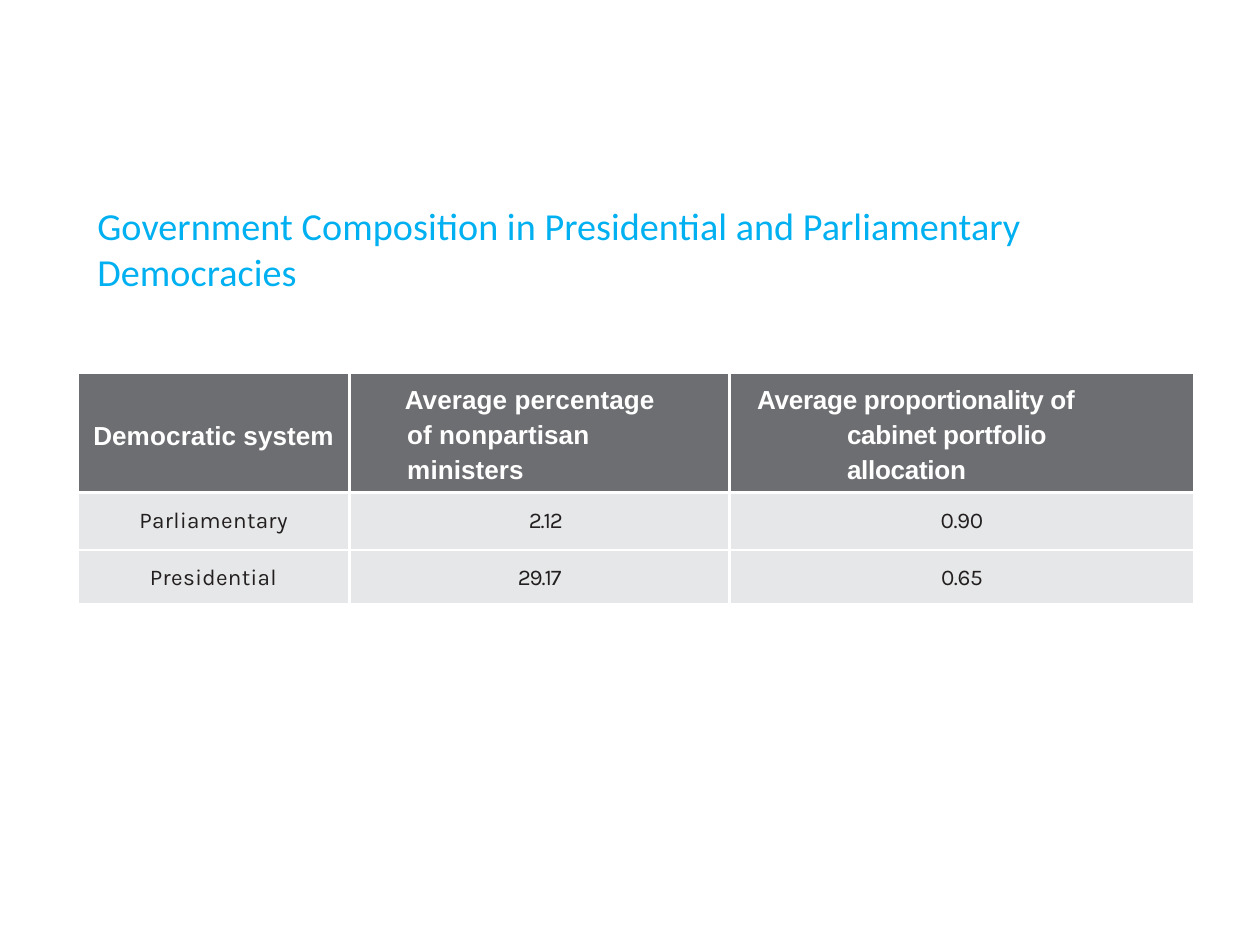
from dataclasses import dataclass

from lxml import etree
from pptx import Presentation
from pptx.dml.color import RGBColor
from pptx.enum.text import MSO_ANCHOR, PP_ALIGN
from pptx.oxml.ns import qn
from pptx.util import Inches, Pt

LEFT, CENTER = PP_ALIGN.LEFT, PP_ALIGN.CENTER
TOP, MIDDLE = MSO_ANCHOR.TOP, MSO_ANCHOR.MIDDLE


@dataclass(frozen=True)
class Theme:
    title_color: str = "00B0F0"
    header_fill: str = "6D6E71"
    body_fill: str = "E6E7E8"
    white: str = "FFFFFF"
    ink: str = "231F20"
    title_font: str = "Calibri"
    header_font: str = "Arial"
    body_font: str = "Karla"
    title_size: float = 11
    header_size: float = 7.5
    body_size: float = 6.5


def write_text(tf, text, *, font, size, color, bold=False, align=LEFT,
               spacing=0, line=1.0, before=0, left=0, indent=0):
    p = tf.paragraphs[0]
    p.alignment = align
    p.line_spacing = line
    p.space_before = Pt(before)
    pPr = p._p.get_or_add_pPr()
    pPr.set("marL", str(Inches(left)))
    pPr.set("indent", str(Inches(indent)))
    r = p.add_run()
    r.text = text
    r.font.name = font
    r.font.size = Pt(size)
    r.font.bold = bold
    r.font.color.rgb = RGBColor.from_string(color)
    r._r.get_or_add_rPr().set("spc", str(round(spacing * 100)))


class SlideBuilder:
    def __init__(self, slide, theme):
        self.s = slide
        self.theme = theme

    def title(self, text, left, top, width, height):
        sp = self.s.shapes.add_textbox(Inches(left), Inches(top), Inches(width), Inches(height))
        tf = sp.text_frame
        tf.word_wrap = True
        tf.margin_left = tf.margin_right = tf.margin_bottom = 0
        tf.margin_top = Inches(0.01)
        t = self.theme
        write_text(tf, text, font=t.title_font, size=t.title_size,
                   color=t.title_color, before=0.6, left=0.01)

    def borders(self, cell):
        tcPr = cell._tc.get_or_add_tcPr()
        for side in ("a:lnL", "a:lnR", "a:lnT", "a:lnB"):
            ln = etree.SubElement(tcPr, qn(side), w=str(Pt(1)))
            fill = etree.SubElement(ln, qn("a:solidFill"))
            etree.SubElement(fill, qn("a:srgbClr"), val=self.theme.white)

    def cell(self, cell, text, fill, *, top=0, right=0, anchor=TOP, **text_format):
        cell.margin_left = cell.margin_bottom = 0
        cell.margin_top = Inches(top)
        cell.margin_right = Inches(right)
        cell.vertical_anchor = anchor
        self.borders(cell)
        cell.fill.solid()
        cell.fill.fore_color.rgb = RGBColor.from_string(fill)
        write_text(cell.text_frame, text, **text_format)

    def table(self, header, rows, left, top, widths, heights):
        frame = self.s.shapes.add_table(
            len(heights), len(widths), Inches(left), Inches(top),
            Inches(sum(widths)), Inches(sum(heights)))
        table = frame.table
        table.first_row = table.horz_banding = False
        for column, width in zip(table.columns, widths):
            column.width = Inches(width)
        for row, height in zip(table.rows, heights):
            row.height = Inches(height)
        t = self.theme
        for i, (text, layout) in enumerate(header):
            self.cell(table.cell(0, i), text, t.header_fill, font=t.header_font,
                      size=t.header_size, color=t.white, bold=True, **layout)
        for j, (before, values) in enumerate(rows, 1):
            for i, (text, spacing, indent) in enumerate(values):
                self.cell(table.cell(j, i), text, t.body_fill, top=0.06,
                          font=t.body_font, size=t.body_size, color=t.ink,
                          align=CENTER, before=before, spacing=spacing, left=indent)


def main():
    prs = Presentation()
    prs.slide_width = Inches(363 / 72)
    prs.slide_height = Inches(272.5 / 72)
    builder = SlideBuilder(prs.slides.add_slide(prs.slide_layouts[6]), Theme())
    builder.title("Government Composition in Presidential and Parliamentary Democracies",
                  0.38, 0.8, 4.28, 0.38)
    wrapped = dict(top=0.03, line=1.2, before=1.6)
    header = [
        ("Democratic system", dict(top=0.03, anchor=MIDDLE, align=CENTER)),
        ("Average percentage of nonpartisan ministers",
         dict(wrapped, left=0.23, indent=-0.01, right=0.23)),
        ("Average proportionality of cabinet portfolio allocation",
         dict(wrapped, left=0.47, indent=-0.36, right=0.29, spacing=-0.1)),
    ]
    rows = [
        (4.5, [("Parliamentary", 0.1, 0), ("2.12", -0.3, 0.05), ("0.90", -0.1, 0)]),
        (4, [("Presidential", 0.1, 0), ("29.17", -0.3, 0), ("0.65", -0.1, 0)]),
    ]
    builder.table(header, rows, 0.31, 1.49, [1.09, 1.52, 1.86], [0.46, 0.23, 0.22])
    prs.save("out.pptx")


if __name__ == "__main__":
    main()
